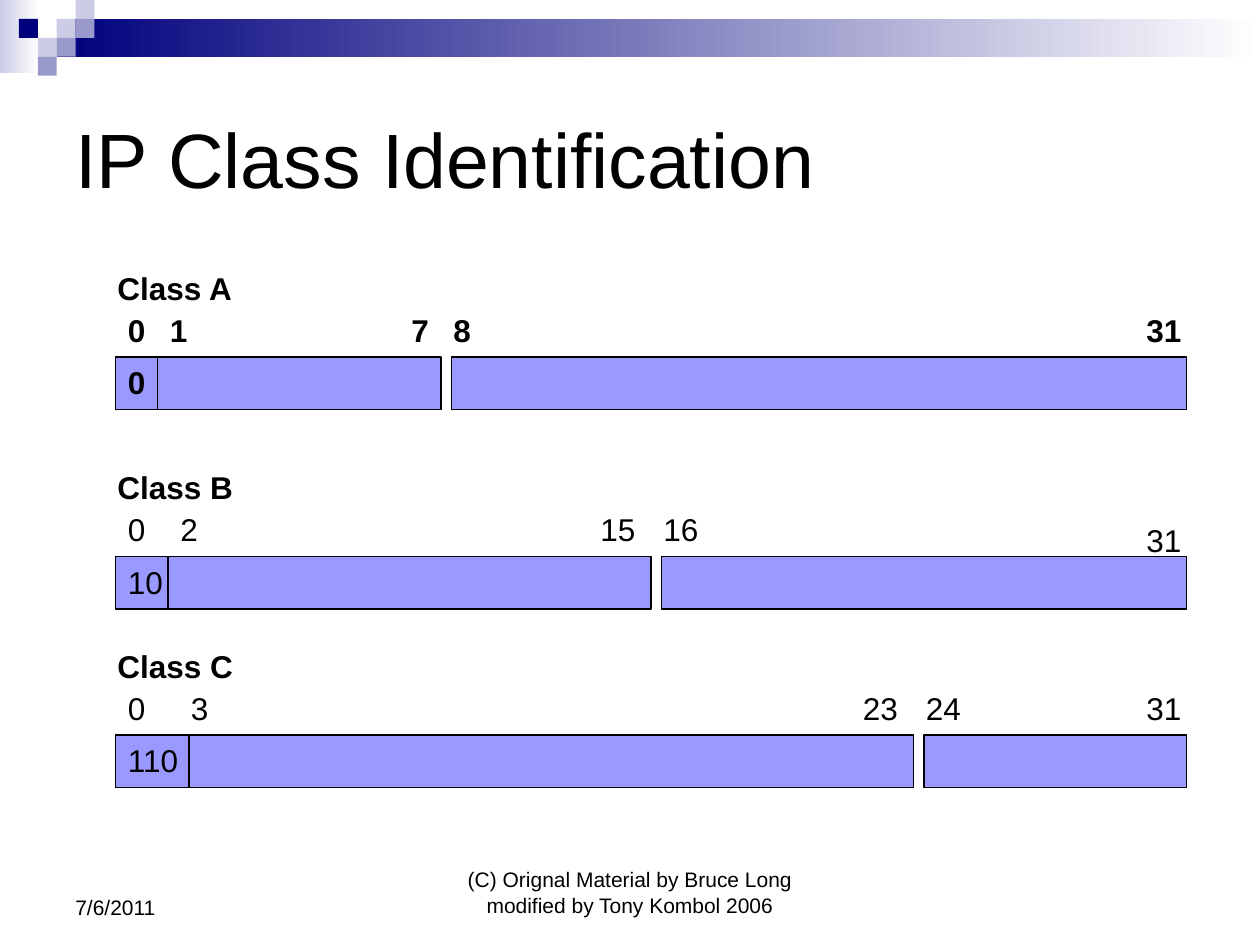
import pptx
import pptx.dml.color
import pptx.enum.shapes
import pptx.enum.text
import pptx.oxml
import pptx.util
from collections import namedtuple

RGBColor = pptx.dml.color.RGBColor
Align = pptx.enum.text.PP_ALIGN
Anchor = pptx.enum.text.MSO_ANCHOR

BLACK = RGBColor(0x00, 0x00, 0x00)
WHITE = RGBColor(0xFF, 0xFF, 0xFF)
NAVY = RGBColor(0x00, 0x00, 0x7D)
LAVENDER = RGBColor(0xCC, 0xCC, 0xE6)
PERIWINKLE = RGBColor(0x99, 0x99, 0xCC)
FIELD_BLUE = RGBColor(0x99, 0x99, 0xFF)

FONT = "Arial"
WIDTH, HEIGHT = 10, 7.5
CELL = 1 / 12    # address diagrams: grid of twelve cells to the inch
SQUARE = 0.15    # banner: side of one checker square

Box = namedtuple("Box", "left top width height")


def inches(*lengths):
    return [pptx.util.Inches(length) for length in lengths]


def grid(left, top, width, height):
    return Box(*(CELL * count for count in (left, top, width, height)))


def format_text(frame, text, size=18, bold=False, align=Align.LEFT,
                anchor=Anchor.TOP, wrap=True):
    frame.word_wrap = wrap
    frame.auto_size = (pptx.enum.text.MSO_AUTO_SIZE.NONE if wrap
                       else pptx.enum.text.MSO_AUTO_SIZE.SHAPE_TO_FIT_TEXT)
    frame.vertical_anchor = anchor
    paragraph = frame.paragraphs[0]
    paragraph.alignment = align
    run = paragraph.add_run()
    run.text = text
    run.font.name = FONT
    run.font.size = pptx.util.Pt(size)
    run.font.bold = bold
    run.font.color.rgb = BLACK


def add_text(slide, box, text, **style):
    format_text(slide.shapes.add_textbox(*inches(*box)).text_frame, text, **style)


def add_rectangle(slide, box, color, fade_to=None, outline=None):
    shape = slide.shapes.add_shape(
        pptx.enum.shapes.MSO_SHAPE.RECTANGLE, *inches(*box))
    shape.shadow.inherit = False
    if fade_to is None:
        shape.fill.solid()
        shape.fill.fore_color.rgb = color
    else:
        shape.fill.gradient()
        shape.fill.gradient_angle = 0
        for stop, stop_color in zip(shape.fill.gradient_stops, (color, fade_to)):
            stop.color.rgb = stop_color
    if outline is None:
        shape.line.fill.background()
    else:
        shape.line.color.rgb = outline
        shape.line.width = pptx.util.Pt(0.75)


def add_divider(slide, x, top, bottom):
    line = slide.shapes.add_connector(
        pptx.enum.shapes.MSO_CONNECTOR.STRAIGHT, *inches(x, top, x, bottom))
    line.line.color.rgb = BLACK
    line.line.width = pptx.util.Pt(0.75)
    line._element.spPr.append(pptx.oxml.parse_xml(
        '<a:effectLst xmlns:a="http://schemas.openxmlformats.org/drawingml/2006/main"/>'))


def add_banner(slide, box):
    # Fading bars
    add_rectangle(slide, Box(box.left, box.top, 0.31, 0.58), LAVENDER, WHITE)
    bar_left = box.left + 3 * SQUARE
    add_rectangle(slide, Box(bar_left, box.top + SQUARE, box.width - bar_left,
                             2 * SQUARE), NAVY, WHITE)
    # Checker squares by column and row
    squares = [(3, 1, LAVENDER), (4, 0, LAVENDER), (4, 1, PERIWINKLE),
               (2, 2, LAVENDER), (1, 1, NAVY), (3, 2, PERIWINKLE),
               (2, 3, PERIWINKLE)]
    for column, row, color in squares:
        add_rectangle(slide, Box(box.left + column * SQUARE, box.top + row * SQUARE,
                                 SQUARE, SQUARE), color)


def add_title(slide, box, text):
    title = slide.shapes.title
    title.left, title.top, title.width, title.height = inches(*box)
    format_text(title.text_frame, text, size=44, anchor=Anchor.MIDDLE)


def add_address_class(slide, left, top, width, name, prefix, divider, network_end,
                      bits, bold=False, second_column=None, last_drop=0):
    """Draw one address; columns and rows count grid cells from left and top."""
    bar = 9          # row where the bar starts
    bar_height = 5
    label_row = bar - 5
    host_start = network_end + 1

    # Network and host fields
    for start, end in ((0, network_end), (host_start, width)):
        add_rectangle(slide, grid(left + start, top + bar, end - start, bar_height),
                      FIELD_BLUE, outline=BLACK)
    add_divider(slide, CELL * (left + divider), CELL * (top + bar),
                CELL * (top + bar + bar_height))

    # Class name, fixed prefix and bit numbers
    second, network_last, host_first = bits
    network_last_column = network_end - (4 if len(network_last) == 1 else 6)
    labels = [
        (-1, 0, name, True),
        (0, bar, prefix, bold),
        (0, label_row, "0", bold),
        (second_column or divider, label_row, second, bold),
        (network_last_column, label_row, network_last, bold),
        (network_end, label_row, host_first, bold),
        (width - 5, label_row + last_drop, "31", bold),
    ]
    text_widths = {1: 0.34, 2: 0.48, 3: 0.61, 7: 1.12}
    for column, row, text, is_bold in labels:
        box = Box(CELL * (left + column), CELL * (top + row),
                  text_widths[len(text)], 0.4)
        add_text(slide, box, text, bold=is_bold, wrap=False)


def add_footer(slide, box):
    add_text(slide, Box(box.left, box.top, 2.33, box.height), "7/6/2011",
             size=12, anchor=Anchor.BOTTOM)
    credit_width = 3.17
    add_text(slide, Box((WIDTH - credit_width) / 2, box.top, credit_width, 0.5),
             "(C) Orignal Material by Bruce Long modified by Tony Kombol 2006",
             size=12, align=Align.CENTER, anchor=Anchor.BOTTOM)


def main():
    presentation = pptx.Presentation()
    presentation.slide_width, presentation.slide_height = inches(WIDTH, HEIGHT)
    slide = presentation.slides.add_slide(presentation.slide_layouts[5])

    add_banner(slide, Box(0, 0, WIDTH, 0.6))
    add_title(slide, Box(0.5, 0.5, WIDTH - 1, 1.5), "IP Class Identification")

    left, width = 11, 102
    add_address_class(slide, left, 25, width, "Class A", "0", 4, 31,
                      ("1", "7", "8"), bold=True)
    add_address_class(slide, left, 44, width, "Class B", "10", 5, 51,
                      ("2", "15", "16"), last_drop=1)
    add_address_class(slide, left, 61, width, "Class C", "110", 7, 76,
                      ("3", "23", "24"), second_column=6)

    add_footer(slide, Box(0.5, 6.83, WIDTH - 1, 0.52))
    presentation.save("out.pptx")


if __name__ == "__main__":
    main()
